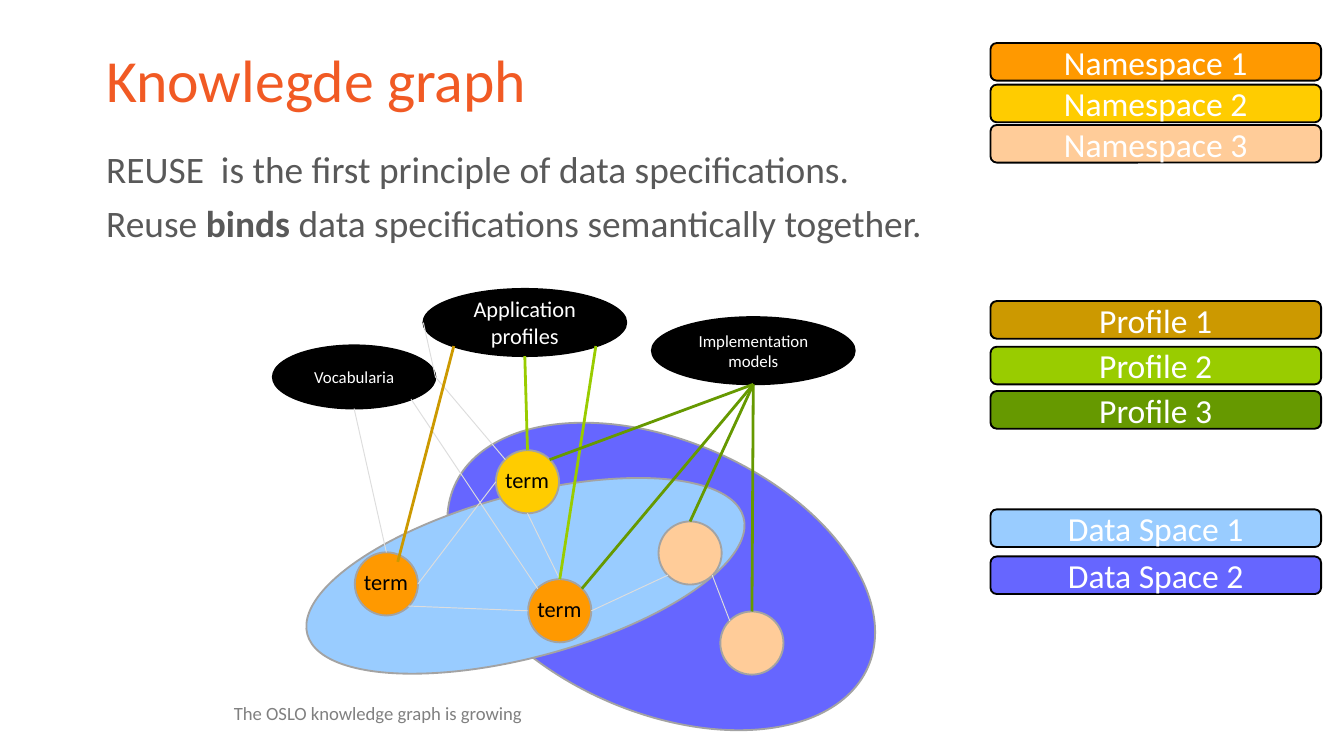
from lxml.etree import SubElement
from pptx import Presentation
from pptx.dml.color import RGBColor
from pptx.enum.shapes import MSO_CONNECTOR, MSO_SHAPE
from pptx.enum.text import MSO_ANCHOR, MSO_AUTO_SIZE, PP_ALIGN
from pptx.oxml.ns import qn
from pptx.util import Inches, Pt

FONT = "Calibri"
WHITE = RGBColor(0xFF, 0xFF, 0xFF)
BLACK = RGBColor(0x00, 0x00, 0x00)
TITLE_ORANGE = RGBColor(0xF1, 0x5A, 0x24)
BODY_GRAY = RGBColor(0x59, 0x59, 0x59)
CAPTION_GRAY = RGBColor(0x80, 0x80, 0x80)
OUTLINE_GRAY = RGBColor(0xA3, 0xA3, 0xA3)
LINK_GRAY = RGBColor(0xDD, 0xDD, 0xDD)
ORANGE = RGBColor(0xFF, 0x99, 0x00)
YELLOW = RGBColor(0xFF, 0xCC, 0x00)
PEACH = RGBColor(0xFF, 0xCC, 0x99)
OCHRE = RGBColor(0xCC, 0x99, 0x00)
LIME = RGBColor(0x99, 0xCC, 0x00)
GREEN = RGBColor(0x66, 0x99, 0x00)
SKY = RGBColor(0x99, 0xCC, 0xFF)
VIOLET = RGBColor(0x66, 0x66, 0xFF)

TITLE = "Knowlegde graph"
# Each paragraph is a list of (text, bold) runs.
BODY = [
    [("REUSE  is the first principle of data specifications.", False)],
    [("Reuse ", False), ("binds", True),
     (" data specifications semantically together.", False)],
]
CAPTION = [[("The OSLO knowledge graph is growing", False)]]

# Box, rotation, colour
DATA_SPACES = [
    ((3.24, 3.28, 3.36, 2.02), 23.6, VIOLET),
    ((2.23, 3.68, 3.36, 1.21), 345, SKY),
]
# Name: box, text, size
SOURCES = {
    "vocabularia": ((2.03, 2.57, 1.21, 0.47), "Vocabularia", 9),
    "profiles": ((3.15, 2.15, 1.51, 0.5), "Application profiles", 12),
    "models": ((4.85, 2.36, 1.51, 0.5), "Implementation models", 9),
}
# Name: left, top, colour, label
TERM_SIZE = 0.47
TERMS = {
    "left term": (2.64, 4.11, ORANGE, "term"),
    "top term": (3.69, 3.35, YELLOW, "term"),
    "middle term": (3.93, 4.31, ORANGE, "term"),
    "shared term": (4.9, 3.88, PEACH, None),
    "outer term": (5.36, 4.55, PEACH, None),
}
# Points on an ellipse, as fractions of its width and height from the centre
DIAGONAL = 0.35
SITES = {
    "top": (0, -0.5), "bottom": (0, 0.5), "left": (-0.5, 0), "right": (0.5, 0),
    "top left": (-DIAGONAL, -DIAGONAL), "top right": (DIAGONAL, -DIAGONAL),
    "bottom left": (-DIAGONAL, DIAGONAL), "bottom right": (DIAGONAL, DIAGONAL),
    "upper": (0.18, -DIAGONAL),
}
# Colour, width, then the (start, site, end, site) of each line
LINKS = [
    (LINK_GRAY, 0.5, [
        ("vocabularia", "right", "profiles", "left"),
        ("vocabularia", "bottom", "left term", "top"),
        ("vocabularia", "bottom right", "middle term", "top left"),
        ("vocabularia", "right", "top term", "top left"),
        ("left term", "right", "top term", "left"),
        ("left term", "bottom right", "middle term", "left"),
        ("top term", "bottom", "middle term", "top"),
        ("middle term", "right", "shared term", "bottom left"),
        ("shared term", "bottom right", "outer term", "top left"),
    ]),
    (OCHRE, 1.5, [("profiles", "bottom left", "left term", "upper")]),
    (LIME, 1.5, [
        ("profiles", "bottom", "top term", "top"),
        ("profiles", "bottom right", "middle term", "top"),
    ]),
    (GREEN, 1.5, [
        ("models", "bottom", "top term", "top right"),
        ("models", "bottom", "middle term", "top right"),
        ("models", "bottom", "shared term", "top"),
        ("models", "bottom", "outer term", "top"),
    ]),
]
# Group name, top of each key, colours
LEGEND = [
    ("Namespace", [0.32, 0.63, 0.93], [ORANGE, YELLOW, PEACH]),
    ("Profile", [2.24, 2.58, 2.91], [OCHRE, LIME, GREEN]),
    ("Data Space", [3.79, 4.14], [SKY, VIOLET]),
]


def format_font(paragraph, size, color):
    paragraph.font.name = FONT
    paragraph.font.size = Pt(size)
    paragraph.font.color.rgb = color


def fill_placeholder(placeholder, box, paragraphs, size, color, spacing, anchor):
    (placeholder.left, placeholder.top,
     placeholder.width, placeholder.height) = map(Inches, box)
    frame = placeholder.text_frame
    frame.auto_size = MSO_AUTO_SIZE.NONE
    frame.vertical_anchor = anchor
    for index, runs in enumerate(paragraphs):
        paragraph = frame.add_paragraph() if index else frame.paragraphs[0]
        paragraph.alignment = PP_ALIGN.LEFT
        paragraph.line_spacing = spacing
        paragraph.space_before = Pt(10 if index else 0)
        properties = paragraph._p.get_or_add_pPr()
        properties.set("marL", "0")
        properties.set("indent", "0")
        SubElement(properties, qn("a:buNone"))
        format_font(paragraph, size, color)
        for text, bold in runs:
            run = paragraph.add_run()
            run.text = text
            if bold:
                run.font.bold = True
    return frame


def add_shape(slide, kind, box, fill, outline, text=None, size=None):
    shape = slide.shapes.add_shape(kind, *map(Inches, box))
    shape.shadow.inherit = False
    shape.fill.solid()
    shape.fill.fore_color.rgb = fill
    shape.line.color.rgb = outline
    shape.line.width = Pt(1)
    if text:
        frame = shape.text_frame
        frame.vertical_anchor = MSO_ANCHOR.MIDDLE
        paragraph = frame.paragraphs[0]
        paragraph.text = text
        paragraph.alignment = PP_ALIGN.CENTER
        format_font(paragraph, size, WHITE)
    return shape


def site_point(box, site):
    left, top, width, height = box
    across, down = SITES[site]
    return Inches(left + width * (0.5 + across)), Inches(top + height * (0.5 + down))


def add_link(slide, start, end, color, width):
    link = slide.shapes.add_connector(MSO_CONNECTOR.STRAIGHT, *start, *end)
    link.line.color.rgb = color
    link.line.width = Pt(width)
    SubElement(link._element.spPr, qn("a:effectLst"))


def add_term_label(slide, left, top, text):
    box = (left - 0.03, top + 0.07, 0.7, 0.3)
    frame = slide.shapes.add_textbox(*map(Inches, box)).text_frame
    frame.word_wrap = True
    frame.auto_size = MSO_AUTO_SIZE.SHAPE_TO_FIT_TEXT
    frame.paragraphs[0].text = text
    format_font(frame.paragraphs[0], 12, BLACK)


def main():
    presentation = Presentation()
    presentation.slide_width = Inches(10)
    presentation.slide_height = Inches(10) * 9 // 16
    slide = presentation.slides.add_slide(presentation.slide_layouts[3])
    title, body, caption = slide.placeholders

    fill_placeholder(title, (0.69, 0.3, 8.62, 0.63), [[(TITLE, False)]],
                     32, TITLE_ORANGE, 0.9, MSO_ANCHOR.MIDDLE)
    fill_placeholder(body, (0.69, 1.1, 8.62, 0.83), BODY,
                     20, BODY_GRAY, 0.8, MSO_ANCHOR.TOP)
    frame = fill_placeholder(caption, (1.74, 5.21, 3.03, 0.18), CAPTION,
                             10, CAPTION_GRAY, 0.9, MSO_ANCHOR.BOTTOM)
    frame.margin_left = frame.margin_right = 0
    frame.margin_top = frame.margin_bottom = 0

    ellipse = MSO_SHAPE.FLOWCHART_CONNECTOR
    for box, rotation, color in DATA_SPACES:
        add_shape(slide, ellipse, box, color, OUTLINE_GRAY).rotation = rotation

    boxes = {}
    for name, (box, text, size) in SOURCES.items():
        boxes[name] = box
        add_shape(slide, ellipse, box, BLACK, BLACK, text, size)
    for name, (left, top, color, label) in TERMS.items():
        boxes[name] = (left, top, TERM_SIZE, TERM_SIZE)
        add_shape(slide, ellipse, boxes[name], color, OUTLINE_GRAY)

    for color, width, links in LINKS:
        for start, start_site, end, end_site in links:
            add_link(slide, site_point(boxes[start], start_site),
                     site_point(boxes[end], end_site), color, width)
    for left, top, color, label in TERMS.values():
        if label:
            add_term_label(slide, left, top, label)

    for group, tops, colors in LEGEND:
        for number, (top, color) in enumerate(zip(tops, colors), start=1):
            add_shape(slide, MSO_SHAPE.FLOWCHART_ALTERNATE_PROCESS,
                      (7.37, top, 2.46, 0.28), color, BLACK, f"{group} {number}", 18)

    presentation.save("out.pptx")


if __name__ == "__main__":
    main()
